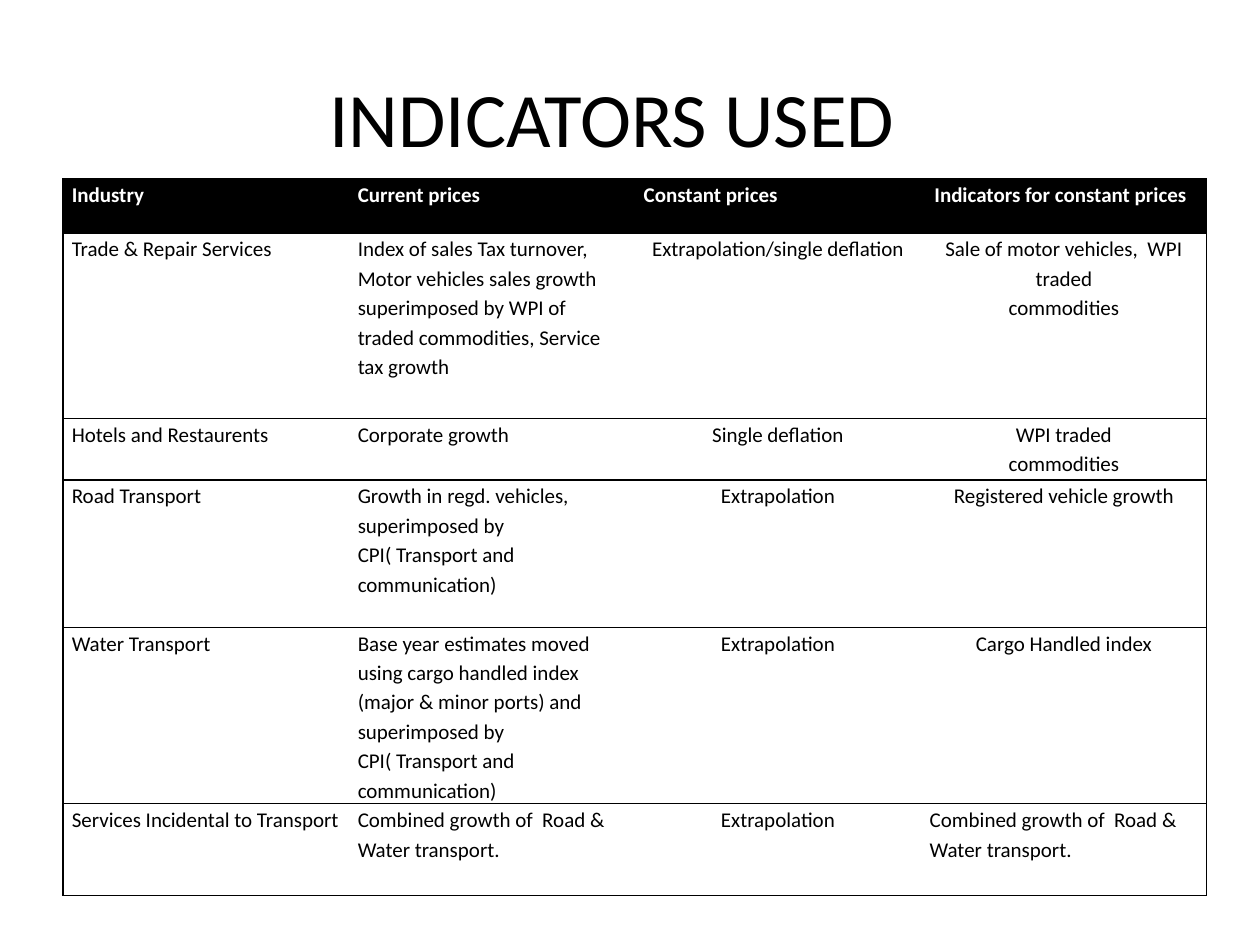
from lxml.etree import SubElement
from pptx import Presentation
from pptx.dml.color import RGBColor
from pptx.enum.text import MSO_ANCHOR as Anchor, PP_ALIGN as Align
from pptx.oxml.ns import qn
from pptx.util import Inches, Pt

BLACK, WHITE = "000000", "FFFFFF"
FONT = "Calibri"
ROW_HEIGHTS = [0.43, 1.47, 0.49, 1.17, 1.4, 0.73]
HEADINGS = ["Industry", "Current prices", "Constant prices", " Indicators for constant prices"]
INDUSTRIES = [
    ["Trade & Repair Services",
     "Index of sales Tax turnover, Motor vehicles sales growth superimposed by WPI of "
     "traded commodities, Service tax growth",
     "Extrapolation/single deflation",
     "Sale of motor vehicles,  WPI traded\ncommodities"],
    ["Hotels and Restaurents", "Corporate growth", "Single deflation",
     "WPI traded\ncommodities"],
    ["Road Transport",
     "Growth in regd. vehicles, superimposed by CPI( Transport and communication)",
     "Extrapolation", "Registered vehicle growth"],
    ["Water Transport",
     "Base year estimates moved using cargo handled index (major & minor ports) and "
     "superimposed by CPI( Transport and communication)",
     "Extrapolation", "Cargo Handled index"],
    ["Services Incidental to Transport",
     "Combined growth of  Road & Water transport.",
     "Extrapolation", "Combined growth of  Road & Water transport."],
]


def rgb(value):
    return RGBColor.from_string(value)


def apply_format(target, values):
    for key, value in values.items():
        setattr(target, key, value)


def format_font(font, size, color, bold=False):
    apply_format(font, {"name": FONT, "size": Pt(size), "bold": bold})
    font.color.rgb = rgb(color)


def set_borders(cell, visible_sides):
    properties = cell._tc.get_or_add_tcPr()
    for position, side in enumerate(["L", "R", "T", "B"]):
        border = SubElement(properties, qn(f"a:ln{side}"), w=str(Pt(0.75)))
        properties.remove(border)
        properties.insert(position, border)
        if side in visible_sides:
            fill = SubElement(border, qn("a:solidFill"))
            SubElement(fill, qn("a:srgbClr"), val=BLACK)
        else:
            SubElement(border, qn("a:noFill"))


def add_title(slide, left, top, width, height):
    title = slide.shapes.title
    apply_format(title, {"left": left, "top": top, "width": width, "height": height})
    frame = title.text_frame
    frame.text = "INDICATORS USED"
    apply_format(frame, {"vertical_anchor": Anchor.MIDDLE, "word_wrap": True,
                         "margin_right": Inches(0.38)})
    heading = frame.paragraphs[0]
    heading.alignment = Align.CENTER
    format_font(heading.runs[0].font, 44, BLACK)


def fill_cell(cell, words, fill, color, bold, alignment):
    cell.text = words
    apply_format(cell, {"margin_left": Inches(0.07), "margin_right": Inches(0.07),
                        "margin_top": 0, "margin_bottom": 0,
                        "vertical_anchor": Anchor.TOP})
    if fill:
        cell.fill.solid()
        cell.fill.fore_color.rgb = rgb(fill)
    else:
        cell.fill.background()
    for paragraph in cell.text_frame.paragraphs:
        apply_format(paragraph, {"alignment": alignment, "line_spacing": 1.15})
        for run in paragraph.runs:
            format_font(run.font, 12, color, bold)


def add_indicator_table(slide, left, top, width, height):
    rows = [HEADINGS] + INDUSTRIES
    last_column = len(HEADINGS) - 1
    table = slide.shapes.add_table(len(rows), len(HEADINGS), left, top, width, height).table
    table.horz_banding = False
    for row, row_height in zip(table.rows, ROW_HEIGHTS):
        row.height = Inches(row_height)
    for row_index, row_words in enumerate(rows):
        is_header = row_index == 0
        for column, words in enumerate(row_words):
            cell = table.cell(row_index, column)
            centred = not is_header and column >= 2 and not words.startswith("Combined")
            fill_cell(cell, words, BLACK if is_header else None,
                      WHITE if is_header else BLACK, is_header,
                      Align.CENTER if centred else Align.LEFT)
            outer_side = {0: "L", last_column: "R"}.get(column, "")
            set_borders(cell, "TB" + outer_side)


def main():
    deck = Presentation()
    apply_format(deck, {"slide_width": Inches(10), "slide_height": Inches(7.5)})
    slide = deck.slides.add_slide(deck.slide_layouts[5])
    add_title(slide, Inches(0.5), Inches(0.3), Inches(9), Inches(1.25))
    add_indicator_table(slide, Inches(0.5), Inches(1.42), Inches(9.08),
                        Inches(sum(ROW_HEIGHTS)))
    deck.save("out.pptx")


if __name__ == "__main__":
    main()
